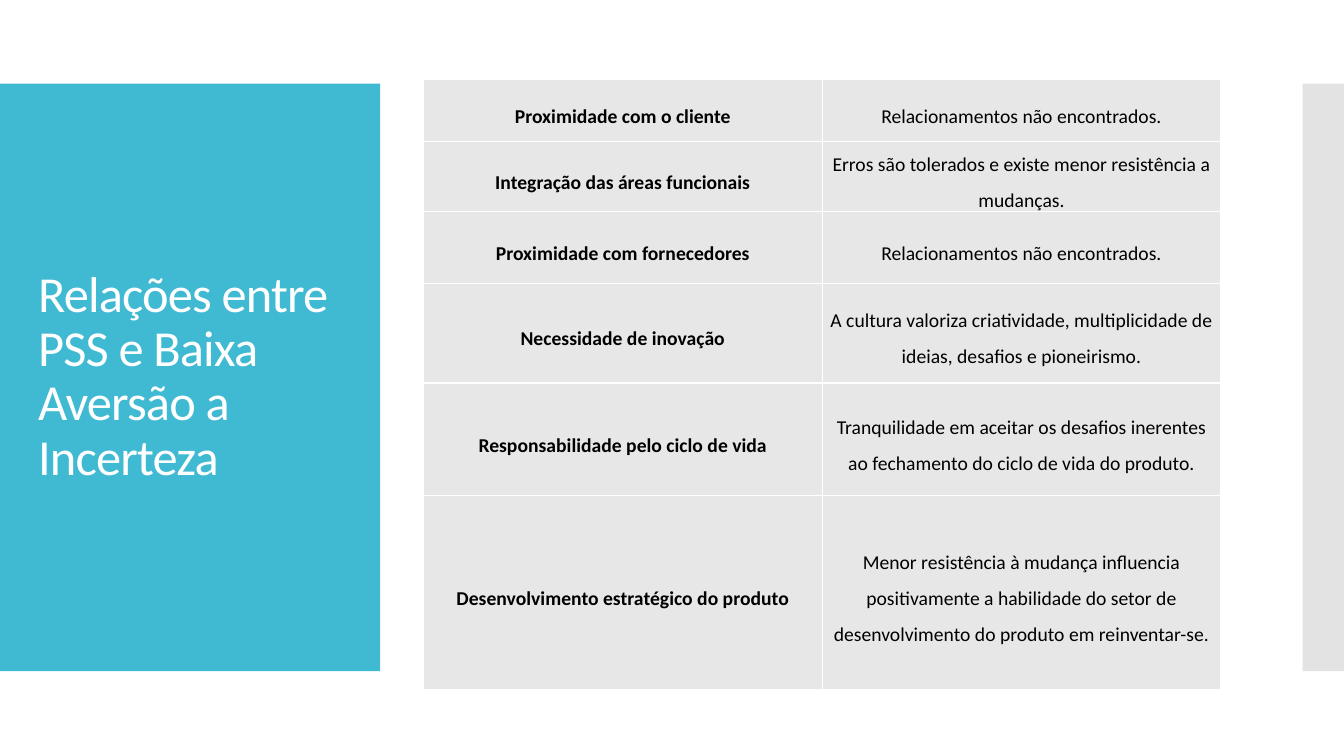
from dataclasses import dataclass

from lxml import etree
from pptx import Presentation
from pptx import util as u
from pptx.dml.color import RGBColor
from pptx.enum import shapes, text
from pptx.oxml import ns


@dataclass(frozen=True)
class Theme:
    """Colours, font and type sizes of the slide."""
    font: str = "Calibri"
    accent: str = "40BAD2"
    side: str = "C8C8C8"
    cell: str = "E7E7E7"
    white: str = "FFFFFF"
    black: str = "000000"
    title_size: int = 36
    table_size: int = 14


THEME = Theme()
TITLE = "Relações entre PSS e Baixa Aversão a Incerteza"
RELATIONS = [
    ("Proximidade com o cliente", "Relacionamentos não encontrados.", 0.61),
    ("Integração das áreas funcionais",
     "Erros são tolerados e existe menor resistência a mudanças.", 0.67),
    ("Proximidade com fornecedores", "Relacionamentos não encontrados.", 0.71),
    ("Necessidade de inovação",
     "A cultura valoriza criatividade, multiplicidade de ideias, desafios e pioneirismo.", 0.99),
    ("Responsabilidade pelo ciclo de vida",
     "Tranquilidade em aceitar os desafios inerentes ao fechamento do ciclo de vida do produto.",
     1.12),
    ("Desenvolvimento estratégico do produto",
     "Menor resistência à mudança influencia positivamente a habilidade do setor de "
     "desenvolvimento do produto em reinventar-se.", 1.92),
]


def format_paragraph(paragraph, size, color, spacing, bold=False):
    """Set line spacing and the font of every run."""
    paragraph.line_spacing = spacing
    for run in paragraph.runs:
        run.font.name = THEME.font
        run.font.size = u.Pt(size)
        run.font.bold = bold
        run.font.color.rgb = RGBColor.from_string(color)


def add_panel(slide, box, color, opacity=100):
    """Draw a plain rectangle, optionally translucent."""
    shape = slide.shapes.add_shape(shapes.MSO_SHAPE.RECTANGLE, *map(u.Inches, box))
    shape.shadow.inherit = False
    shape.fill.solid()
    shape.fill.fore_color.rgb = RGBColor.from_string(color)
    shape.line.fill.background()
    if opacity < 100:
        fill = shape.fill._xPr.find(ns.qn("a:solidFill"))
        etree.SubElement(fill[0], ns.qn("a:alpha"), val=str(opacity * 1000))


def add_title_panel(slide, box):
    """Draw the coloured panel with the slide title inside it."""
    left, top, width, height = box
    add_panel(slide, box, THEME.accent)
    title_box = (left + 0.28, top + 0.4, width - 0.55, height - 0.8)
    frame = slide.shapes.add_textbox(*map(u.Inches, title_box)).text_frame
    frame.word_wrap = True
    frame.vertical_anchor = text.MSO_ANCHOR.MIDDLE
    frame.text = TITLE
    paragraph = frame.paragraphs[0]
    format_paragraph(paragraph, THEME.title_size, THEME.white, 0.9)
    paragraph.runs[0].font._element.set("spc", "-60")


def format_cell(cell, content, bold):
    """Fill one table cell with centred text and thin white borders."""
    cell.margin_left = cell.margin_right = u.Inches(0.06)
    cell.margin_top = cell.margin_bottom = 0
    cell.vertical_anchor = text.MSO_ANCHOR.MIDDLE
    properties = cell._tc.get_or_add_tcPr()
    for side in ("lnL", "lnR", "lnT", "lnB"):
        line = etree.SubElement(properties, ns.qn(f"a:{side}"), w=str(u.Pt(1)))
        fill = etree.SubElement(line, ns.qn("a:solidFill"))
        etree.SubElement(fill, ns.qn("a:srgbClr"), val=THEME.white)
    cell.fill.solid()
    cell.fill.fore_color.rgb = RGBColor.from_string(THEME.cell)
    cell.text_frame.text = content
    paragraph = cell.text_frame.paragraphs[0]
    paragraph.alignment = text.PP_ALIGN.CENTER
    format_paragraph(paragraph, THEME.table_size, THEME.black, 1.5, bold)


def add_relations_table(slide, box):
    """Draw the two-column table of relations."""
    table = slide.shapes.add_table(len(RELATIONS), 2, *map(u.Inches, box)).table
    table.first_row = table.horz_banding = False
    for column in table.columns:
        column.width = u.Inches(box[2] / 2)
    for row, (aspect, relation, height) in zip(table.rows, RELATIONS):
        row.height = u.Inches(height)
        format_cell(row.cells[0], aspect, True)
        format_cell(row.cells[1], relation, False)


def main():
    """Build and save the presentation."""
    presentation = Presentation()
    presentation.slide_width = u.Inches(13.33)
    presentation.slide_height = u.Inches(7.5)
    slide = presentation.slides.add_slide(presentation.slide_layouts[6])
    add_title_panel(slide, (0, 0.83, 3.77, 5.83))
    add_panel(slide, (12.92, 0.83, 0.41, 5.83), THEME.side, 50)
    add_relations_table(slide, (4.2, 0.79, 7.91, 6.02))
    presentation.save("out.pptx")


if __name__ == "__main__":
    main()
